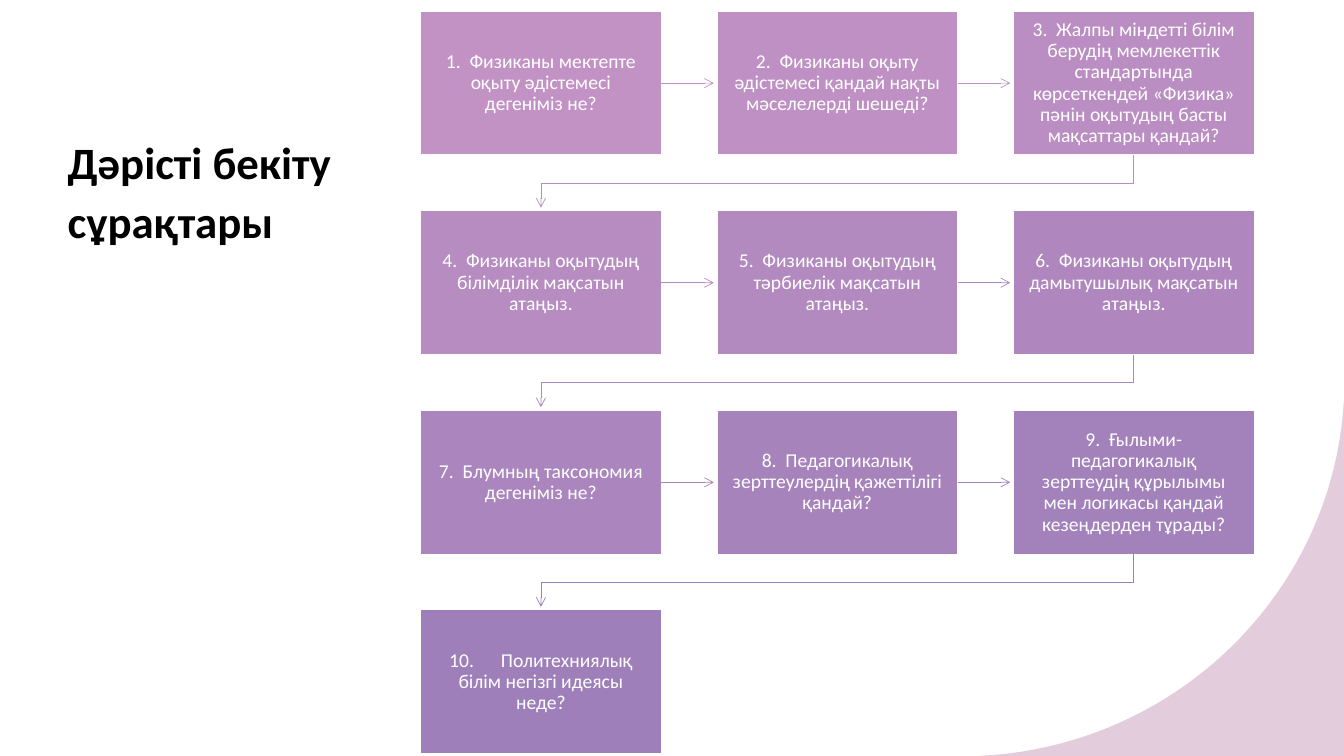
from dataclasses import dataclass

from lxml import etree
from pptx import Presentation
from pptx import util as u
from pptx.dml.color import RGBColor
from pptx.enum import shapes, text
from pptx.oxml import ns


@dataclass(frozen=True)
class Theme:
    font: str = "Calibri"
    title_size: int = 32
    question_size: int = 14
    first: str = "C292C4"
    last: str = "9F7FBA"
    corner: str = "E3CCDB"
    white: str = "FFFFFF"
    black: str = "000000"
    border: float = 1
    arrow: float = 0.5


THEME = Theme()
WIDTH, HEIGHT = u.Inches(13.33), u.Inches(7.5)

# Grid of questions, in inches
COLUMNS = 3
LEFT, TOP = 4.17, 0.11
BOX_W, BOX_H = 2.39, 1.43
PITCH_X, PITCH_Y = 2.94, 1.98
ARROW_GAP = 0.03

TITLE = "Дәрісті бекіту сұрақтары"
QUESTIONS = [
    "Физиканы мектепте оқыту әдістемесі дегеніміз не?",
    "Физиканы оқыту әдістемесі қандай нақты мәселелерді шешеді?",
    "Жалпы міндетті білім берудің мемлекеттік стандартында көрсеткендей "
    "«Физика» пәнін оқытудың басты мақсаттары қандай?",
    "Физиканы оқытудың білімділік мақсатын атаңыз.",
    "Физиканы оқытудың тәрбиелік мақсатын атаңыз.",
    "Физиканы оқытудың дамытушылық мақсатын атаңыз.",
    "Блумның таксономия дегеніміз не?",
    "Педагогикалық зерттеулердің қажеттілігі қандай?",
    "Ғылыми-педагогикалық зерттеудің құрылымы мен логикасы қандай "
    "кезеңдерден тұрады?",
    "Политехниялық білім негізгі идеясы неде?",
]


def apply(target, values):
    for name, value in values.items():
        setattr(target, name, value)


def rgb(colour):
    return RGBColor.from_string(colour)


def blend(share):
    """Colour at a share of the way from the first to the last question."""
    ends = zip(rgb(THEME.first), rgb(THEME.last))
    return RGBColor(*(round(a + (b - a) * share) for a, b in ends))


def cell(index):
    row, column = divmod(index, COLUMNS)
    return LEFT + column * PITCH_X, TOP + row * PITCH_Y


def add_outline(slide, points, close):
    start, *rest = [(u.Inches(x), u.Inches(y)) for x, y in points]
    builder = slide.shapes.build_freeform(*start)
    builder.add_line_segments(rest, close=close)
    outline = builder.convert_to_shape()
    outline.shadow.inherit = False
    return outline


def add_title(slide):
    title = slide.shapes.title
    apply(title, dict(left=u.Inches(0.57), top=u.Inches(1.23),
                      width=u.Inches(3.28), height=u.Inches(1.57)))
    frame = title.text_frame
    frame.text = TITLE
    apply(frame, dict(word_wrap=True, auto_size=text.MSO_AUTO_SIZE.NONE,
                      vertical_anchor=text.MSO_ANCHOR.TOP))
    line = frame.paragraphs[0]
    apply(line, dict(alignment=text.PP_ALIGN.LEFT, line_spacing=1.1))
    font = line.runs[0].font
    apply(font, dict(name=THEME.font, size=u.Pt(THEME.title_size), bold=True))
    font.color.rgb = rgb(THEME.black)


def add_corner(slide, steps=40):
    # Bézier curve from the bottom edge up to the right edge
    curve = [(9.71, 7.5), (11.67, 7.41), (13.23, 5.87), (13.33, 3.96)]
    points = [(13.33, 7.5)]
    for step in range(steps + 1):
        t = step / steps
        weights = ((1 - t) ** 3, 3 * t * (1 - t) ** 2, 3 * t * t * (1 - t), t ** 3)
        points.append(tuple(sum(w * p[axis] for w, p in zip(weights, curve))
                            for axis in (0, 1)))
    corner = add_outline(slide, points, close=True)
    corner.fill.solid()
    corner.fill.fore_color.rgb = rgb(THEME.corner)
    corner.line.fill.background()


def add_question(slide, index, wording):
    x, y = cell(index)
    box = slide.shapes.add_shape(
        shapes.MSO_SHAPE.RECTANGLE, *map(u.Inches, (x, y, BOX_W, BOX_H)))
    box.shadow.inherit = False
    box.fill.solid()
    box.fill.fore_color.rgb = blend(index / (len(QUESTIONS) - 1))
    box.line.color.rgb = rgb(THEME.white)
    box.line.width = u.Pt(THEME.border)

    frame = box.text_frame
    apply(frame, dict(word_wrap=True, vertical_anchor=text.MSO_ANCHOR.MIDDLE))
    apply(frame, {f"margin_{side}": u.Inches(0.12)
                  for side in ("left", "top", "right", "bottom")})
    line = frame.paragraphs[0]
    apply(line, dict(alignment=text.PP_ALIGN.CENTER, line_spacing=0.9))
    number = index + 1
    for part in (f"{number}.", " ", wording):
        run = line.add_run()
        run.text = part
        apply(run.font, dict(name=THEME.font, size=u.Pt(THEME.question_size)))
        run.font.color.rgb = rgb(THEME.white)
    # Widen the gap after the number, in hundredths of a point
    gap = "300" if number < 10 else "1600"
    line.runs[1].font._element.set("spc", gap)
    return box


def style_arrow(arrow, index):
    arrow.line.color.rgb = blend(index / (len(QUESTIONS) - 2))
    arrow.line.width = u.Pt(THEME.arrow)
    properties = arrow._element.spPr
    etree.SubElement(properties.find(ns.qn("a:ln")), ns.qn("a:tailEnd"), type="arrow")
    if properties.find(ns.qn("a:effectLst")) is None:
        etree.SubElement(properties, ns.qn("a:effectLst"))


def add_arrow(slide, index, box):
    """Lead from one question to the next, on the same row or the row below."""
    x, y = cell(index)
    next_x, next_y = cell(index + 1)
    if next_y == y:
        middle = u.Inches(y + BOX_H / 2)
        arrow = slide.shapes.add_connector(
            shapes.MSO_CONNECTOR.STRAIGHT, u.Inches(x + BOX_W), middle,
            u.Inches(next_x - ARROW_GAP), middle)
        arrow.begin_connect(box, 3)
    else:
        start, end = x + BOX_W / 2, next_x + BOX_W / 2
        bottom = y + BOX_H
        turn = (bottom + next_y) / 2
        arrow = add_outline(slide, [(start, bottom), (start, turn), (end, turn),
                                    (end, next_y - ARROW_GAP)], close=False)
        arrow.fill.background()
    style_arrow(arrow, index)


def main():
    deck = Presentation()
    apply(deck, dict(slide_width=WIDTH, slide_height=HEIGHT))
    slide = deck.slides.add_slide(deck.slide_layouts[0])
    slide.background.fill.solid()
    slide.background.fill.fore_color.rgb = rgb(THEME.white)

    # Title only: the subtitle stays unused
    subtitle = slide.placeholders[1]._element
    subtitle.getparent().remove(subtitle)
    add_title(slide)
    add_corner(slide)

    # Chain of questions
    for index, wording in enumerate(QUESTIONS):
        box = add_question(slide, index, wording)
        if index < len(QUESTIONS) - 1:
            add_arrow(slide, index, box)
    deck.save("out.pptx")


if __name__ == "__main__":
    main()
